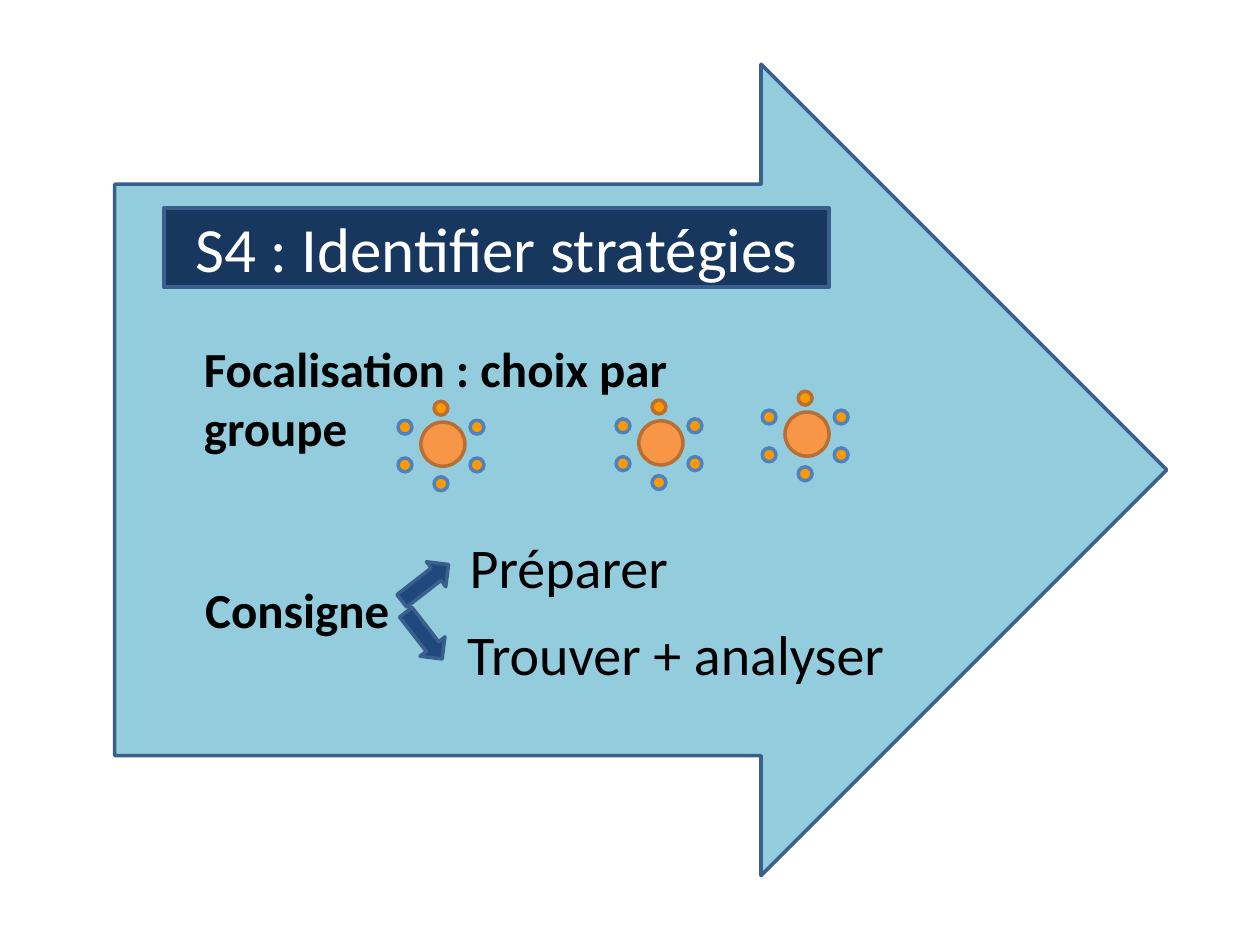
import math
from dataclasses import dataclass

import pptx
import pptx.dml.color
import pptx.enum.shapes
import pptx.enum.text
import pptx.util

Inches = pptx.util.Inches
SHAPES = pptx.enum.shapes.MSO_SHAPE
ALIGN = pptx.enum.text.PP_ALIGN
ANCHOR = pptx.enum.text.MSO_ANCHOR
AUTOSIZE = pptx.enum.text.MSO_AUTO_SIZE


@dataclass(frozen=True)
class Theme:
    font: str = "Calibri"
    title_size: int = 36
    step_size: int = 32
    label_size: int = 28
    line_width: int = 2
    sky: str = "93CDDD"
    navy: str = "17375E"
    blue: str = "1F497D"
    outline: str = "3A5F8C"
    table: str = "F79646"
    table_outline: str = "B76F34"
    seat: str = "FF9900"
    seat_outline: str = "4F81BD"
    white: str = "FFFFFF"
    black: str = "000000"


def rgb(value):
    return pptx.dml.color.RGBColor.from_string(value)


def write(frame, text, *, font, size, color, bold=False, align=ALIGN.LEFT):
    paragraph = frame.paragraphs[0]
    paragraph.alignment = align
    run = paragraph.add_run()
    run.text = text
    run.font.name = font
    run.font.size = pptx.util.Pt(size)
    run.font.bold = bold
    run.font.color.rgb = rgb(color)


class SlideBuilder:
    def __init__(self, slide, theme):
        self.slide = slide
        self.theme = theme

    def shape(self, kind, left, top, width, height, fill, line, parent=None):
        shapes = (parent or self.slide).shapes
        item = shapes.add_shape(kind, Inches(left), Inches(top), Inches(width), Inches(height))
        item.shadow.inherit = False
        item.fill.solid()
        item.fill.fore_color.rgb = rgb(fill)
        item.line.color.rgb = rgb(line)
        item.line.width = pptx.util.Pt(self.theme.line_width)
        return item

    def arrow(self, left, top, width, height, fill, rotation=0, shaft=0.5):
        arrow = self.shape(SHAPES.RIGHT_ARROW, left, top, width, height, fill, self.theme.outline)
        arrow.rotation = rotation
        arrow.adjustments[0] = shaft

    def banner(self, text, left, top, width, height):
        theme = self.theme
        banner = self.shape(SHAPES.RECTANGLE, left, top, width, height, theme.navy, theme.outline)
        banner.text_frame.vertical_anchor = ANCHOR.MIDDLE
        write(banner.text_frame, text, font=theme.font, size=theme.title_size,
              color=theme.white, align=ALIGN.CENTER)

    def text(self, text, left, top, width, height, size, bold=False, wrap=True):
        box = self.slide.shapes.add_textbox(Inches(left), Inches(top), Inches(width), Inches(height))
        box.text_frame.word_wrap = wrap
        box.text_frame.auto_size = AUTOSIZE.SHAPE_TO_FIT_TEXT
        write(box.text_frame, text, font=self.theme.font, size=size,
              color=self.theme.black, bold=bold)

    def circle(self, x, y, diameter, fill, line, parent):
        self.shape(SHAPES.OVAL, x - diameter / 2, y - diameter / 2, diameter, diameter,
                   fill, line, parent)

    def work_group(self, x, y):
        theme = self.theme
        group = self.slide.shapes.add_group_shape()
        self.circle(x + 0.015, y - 0.015, 0.35, theme.table, theme.table_outline, group)
        for seat in range(6):
            angle = math.radians(30 + 60 * seat)
            line = theme.table_outline if seat == 4 else theme.seat_outline
            self.circle(x + 0.33 * math.cos(angle), y + 0.3 * math.sin(angle), 0.11,
                        theme.seat, line, group)


def main():
    deck = pptx.Presentation()
    deck.slide_width, deck.slide_height = Inches(10), Inches(7.5)
    theme = Theme()
    builder = SlideBuilder(deck.slides.add_slide(deck.slide_layouts[6]), theme)

    builder.arrow(0.91, 0.51, 8.35, 6.44, theme.sky, shaft=0.704)
    builder.banner("S4 : Identifier stratégies", 1.3, 1.65, 5.28, 0.63)
    builder.text("Focalisation : choix par groupe", 1.52, 2.64, 4.66, 1.04,
                 theme.label_size, bold=True)
    builder.text("Préparer", 3.63, 4.18, 3.77, 0.64, theme.step_size)

    for x, y in ((6.39, 3.46), (5.23, 3.53), (3.5, 3.54)):
        builder.work_group(x, y)

    for left, top, rotation in ((3.14, 4.5, 322.1), (3.13, 4.92, 52.1)):
        builder.arrow(left, top, 0.47, 0.25, theme.blue, rotation)

    builder.text("Consigne", 1.53, 4.55, 1.68, 0.57, theme.label_size, bold=True, wrap=False)
    builder.text("Trouver + analyser", 3.61, 4.87, 3.55, 0.64, theme.step_size, wrap=False)

    deck.save("out.pptx")


if __name__ == "__main__":
    main()
